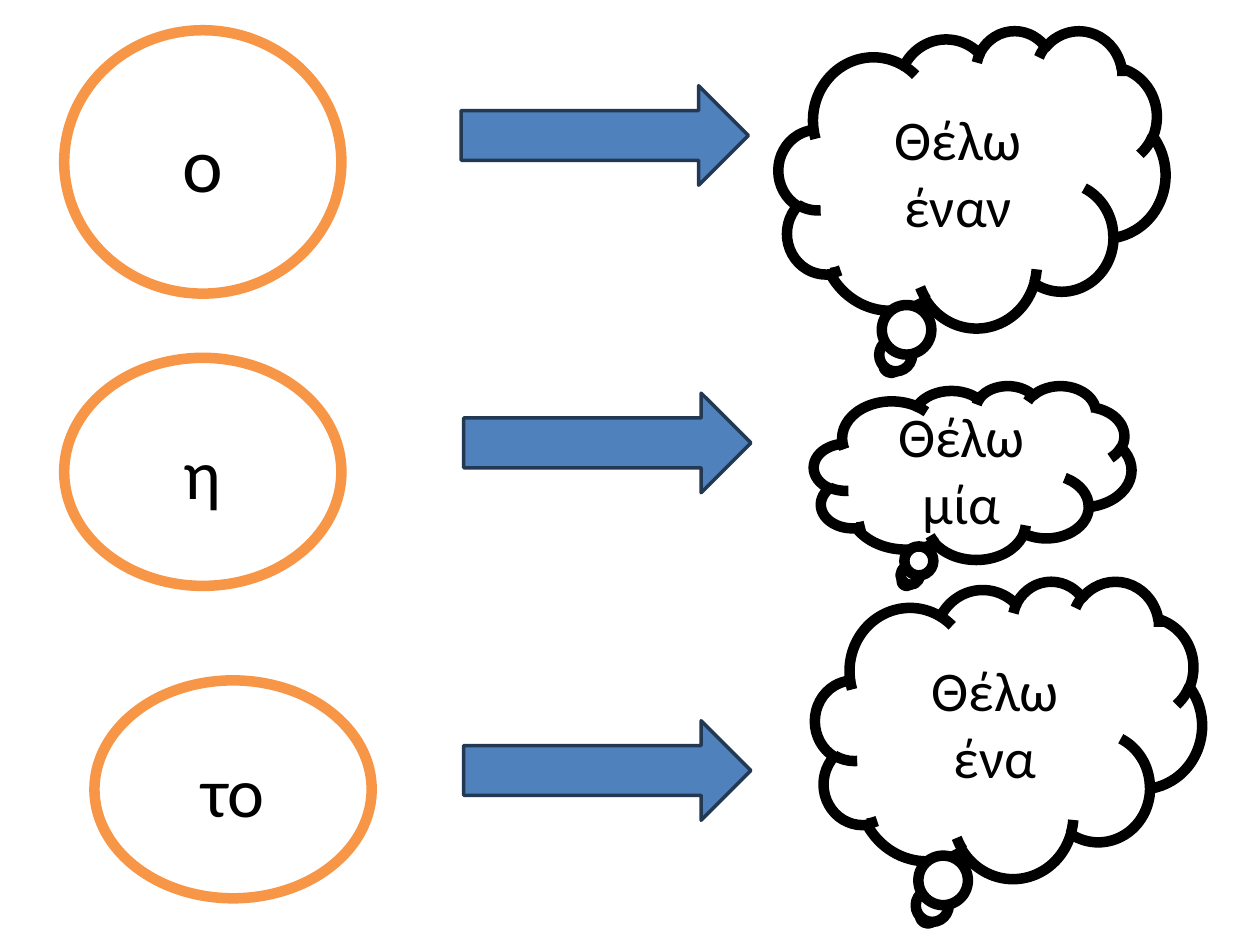
"""Greek articles matched by arrows to the phrases that use them."""
from pptx import Presentation, util as u
from pptx.dml.color import RGBColor
from pptx.enum import shapes, text

ROWS = [
    {"article": ("ο", 44, (0.51, 0.24, 2.2, 2.09)),
     "arrow": (3.66, 0.68),
     "phrase": ("Θέλω\vέναν", 32, (6.18, 0.24, 3.07, 2.36))},
    {"article": ("η", 40, (0.51, 2.84, 2.2, 1.81)),
     "arrow": (3.68, 3.12),
     "phrase": ("Θέλω\vμία", 32, (6.46, 3.06, 2.52, 1.38))},
    {"article": ("το", 40, (0.75, 5.4, 2.2, 1.73)),
     "arrow": (3.68, 5.72),
     "phrase": ("Θέλω\vένα", 32, (6.47, 4.61, 3.07, 2.36))},
]
ARROW_SIZE = (2.28, 0.79)
KIND = shapes.MSO_SHAPE


def color(value):
    return RGBColor.from_string(value)


def add_shape(s, kind, box, fill, line, width):
    sp = s.shapes.add_shape(kind, *map(u.Inches, box))
    sp.shadow.inherit = False
    sp.fill.solid()
    sp.fill.fore_color.rgb = color(fill)
    sp.line.color.rgb = color(line)
    sp.line.width = u.Pt(width)
    return sp


def add_label(s, kind, label, line):
    words, size, box = label
    tf = add_shape(s, kind, box, "FFFFFF", line, 6).text_frame
    tf.word_wrap = True
    tf.vertical_anchor = text.MSO_ANCHOR.MIDDLE
    p = tf.paragraphs[0]
    p.text = words
    p.alignment = text.PP_ALIGN.CENTER
    for r in p.runs:
        r.font.name = "Calibri"
        r.font.size = u.Pt(size)
        r.font.color.rgb = color("000000")


def main():
    prs = Presentation()
    prs.slide_width, prs.slide_height = u.Inches(10), u.Inches(7.5)
    s = prs.slides.add_slide(prs.slide_layouts[6])
    for row in ROWS:
        add_label(s, KIND.OVAL, row["article"], "F79646")
        add_shape(s, KIND.RIGHT_ARROW, row["arrow"] + ARROW_SIZE, "4F81BD", "233953", 2)
        add_label(s, KIND.CLOUD_CALLOUT, row["phrase"], "000000")
    prs.save("out.pptx")


if __name__ == "__main__":
    main()
